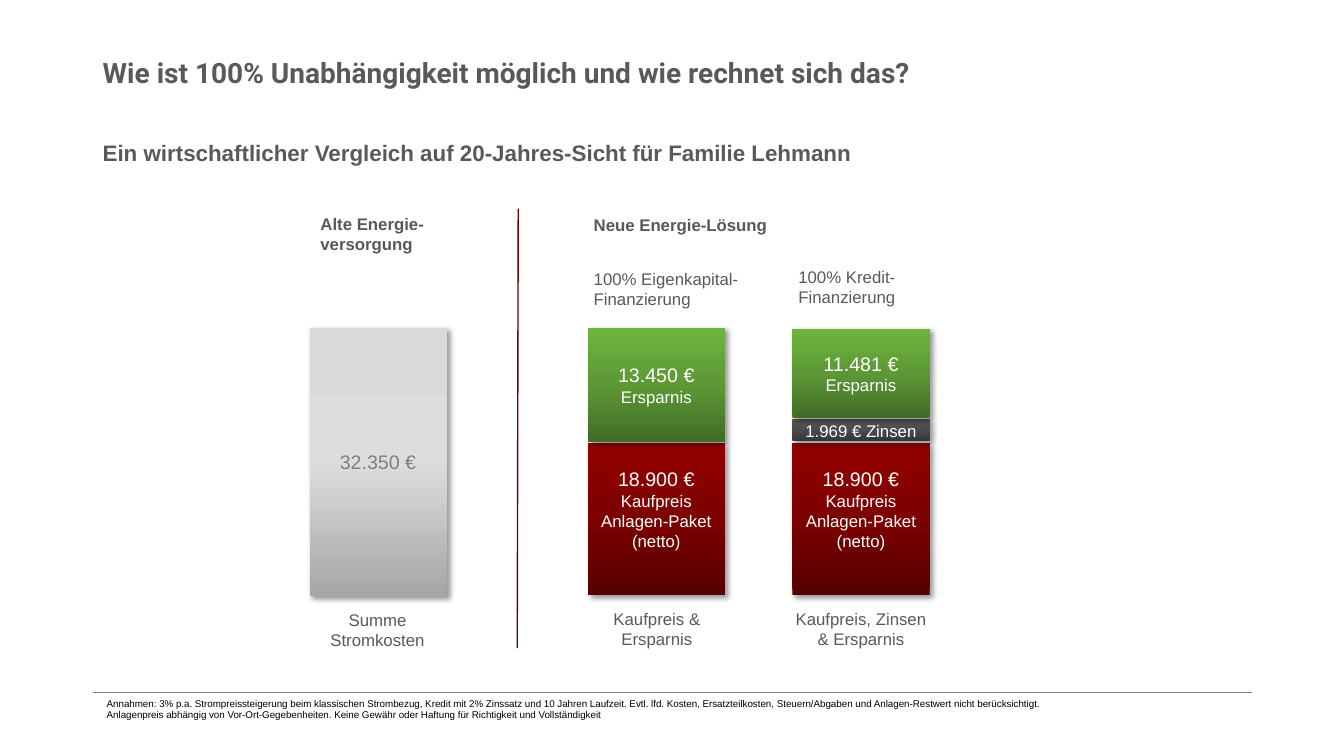
from lxml.etree import SubElement as Sub
from pptx import Presentation
from pptx.dml.color import RGBColor
from pptx.enum.shapes import MSO_CONNECTOR as Conn, MSO_SHAPE as Shape
from pptx.enum.text import MSO_ANCHOR as Anchor, MSO_AUTO_SIZE as Auto, PP_ALIGN as Align
from pptx.oxml.ns import qn
from pptx.util import Inches, Pt

GRAY, WHITE = "595959", "FFFFFF"
RED = ("570000", "7C0000", "930000")
GREEN = ("416B26", "5D9835", "6EB53F")
DARK = ("353535", "4B4B4B", "595959")
SILVER = ("A6A6A6", "DDDDDD", "D9D9D9")
OLD_X, CASH_X, LOAN_X = 3.07, 5.83, 7.86
BAR_W = 1.36


def rgb(code):
    return RGBColor.from_string(code)


def write(frame, lines, color, align, bold=False, face="Arial"):
    """Fill a text frame with one paragraph for each (text, size) pair."""
    for i, (text, size) in enumerate(lines):
        para = frame.add_paragraph() if i else frame.paragraphs[0]
        para.alignment = align
        run = para.add_run()
        run.text = text
        font = run.font
        font.name, font.size, font.bold = face, Pt(size), bold
        font.color.rgb = rgb(color)


def add_text(slide, box, lines, size=12, color=GRAY, align=Align.LEFT,
             wrap=True, **style):
    shape = slide.shapes.add_textbox(*map(Inches, box))
    frame = shape.text_frame
    frame.word_wrap = wrap
    frame.auto_size = Auto.SHAPE_TO_FIT_TEXT
    write(frame, [(line, size) for line in lines], color, align, **style)
    return frame


def add_line(slide, start, end, color, width):
    line = slide.shapes.add_connector(Conn.STRAIGHT, *map(Inches, start + end))
    line.line.color.rgb = rgb(color)
    line.line.width = Pt(width)
    Sub(line._element.spPr, qn("a:effectLst"))


def shade(shape, colors):
    """Blend three colours from bottom to top."""
    shape.fill.gradient()
    shape.fill.gradient_angle = 90
    stops = shape._element.spPr.find(".//" + qn("a:gsLst"))
    for stop in list(stops):
        stops.remove(stop)
    for pos, code in zip((0, 50000, 100000), colors):
        stop = Sub(stops, qn("a:gs"), pos=str(pos))
        Sub(stop, qn("a:srgbClr"), val=code)


def add_shadow(shape):
    shape.shadow.inherit = False
    effects = shape._element.spPr.find(qn("a:effectLst"))
    outer = Sub(effects, qn("a:outerShdw"), blurRad=str(Pt(4)), dist=str(Pt(3)),
                dir="2700000", algn="tl", rotWithShape="0")
    tint = Sub(outer, qn("a:srgbClr"), val="000000")
    Sub(tint, qn("a:alpha"), val="40000")


def add_bar(slide, left, top, height, colors, lines, color=WHITE, foot=0.05):
    """Draw one bar segment; foot is the free space below its text."""
    shape = slide.shapes.add_shape(
        Shape.RECTANGLE, *map(Inches, (left, top, BAR_W, height)))
    shade(shape, colors)
    shape.line.fill.background()
    add_shadow(shape)
    frame = shape.text_frame
    frame.word_wrap = True
    frame.vertical_anchor = Anchor.MIDDLE
    frame.margin_bottom = Inches(foot)
    write(frame, lines, color, Align.CENTER)


def add_bars(slide):
    price = [("18.900 €", 14), ("Kaufpreis Anlagen-Paket (netto)", 12)]
    for left in (CASH_X, LOAN_X):
        add_bar(slide, left, 4.4, 1.5, RED, price, foot=0.25)
    add_bar(slide, LOAN_X, 4.16, 0.22, DARK, [("1.969 € Zinsen", 12)])
    for left, top, height, sum_ in ((CASH_X, 3.25, 1.14, "13.450 €"),
                                    (LOAN_X, 3.26, 0.89, "11.481 €")):
        add_bar(slide, left, top, height, GREEN, [(sum_, 14), ("Ersparnis", 12)])
    add_bar(slide, OLD_X, 3.25, 2.66, SILVER, [("32.350 €", 14)], "808080")


def add_labels(slide):
    for box, text in (
        ((3.01, 6, 1.47, 0.5), "Summe Stromkosten"),
        ((5.77, 5.99, 1.49, 0.5), "Kaufpreis & Ersparnis"),
        ((7.77, 5.99, 1.54, 0.5), "Kaufpreis, Zinsen & Ersparnis"),
    ):
        add_text(slide, box, [text], align=Align.CENTER)
    add_text(slide, (3.08, 2.07, 1.46, 0.5), ["Alte Energie-versorgung"], bold=True)
    add_text(slide, (5.79, 2.08, 2.07, 0.3), ["Neue Energie-Lösung"], bold=True)
    for box, kind in (((5.79, 2.62, 1.64, 0.5), "100% Eigenkapital-"),
                      ((7.82, 2.6, 1.44, 0.5), "100% Kredit-")):
        add_text(slide, box, [kind, "Finanzierung"])


def main():
    deck = Presentation()
    deck.slide_width, deck.slide_height = Inches(13.33), Inches(7.5)
    slide = deck.slides.add_slide(deck.slide_layouts[6])

    title = add_text(
        slide, (0.92, 0.49, 8.79, 0.49),
        ["Wie ist 100% Unabhängigkeit möglich und wie rechnet sich das?"],
        size=20, bold=True, face="Roboto")
    title.auto_size = Auto.NONE
    title.vertical_anchor = Anchor.MIDDLE
    title.paragraphs[0].line_spacing = 0.9
    add_text(
        slide, (0.92, 1.33, 8.59, 0.37),
        ["Ein wirtschaftlicher Vergleich auf 20-Jahres-Sicht für Familie Lehmann"],
        size=16, bold=True)

    add_line(slide, (5.14, 2.07), (5.13, 6.43), "6A0000", 1)
    add_bars(slide)
    add_labels(slide)

    add_line(slide, (0.92, 6.87), (12.42, 6.87), "808080", 0.5)
    add_text(
        slide, (0.96, 6.87, 9.61, 0.34),
        ["Annahmen: 3% p.a. Strompreissteigerung beim klassischen Strombezug, "
         "Kredit mit 2% Zinssatz und 10 Jahren Laufzeit. Evtl. lfd. Kosten, "
         "Ersatzteilkosten, Steuern/Abgaben und Anlagen-Restwert nicht "
         "berücksichtigt.",
         "Anlagenpreis abhängig von Vor-Ort-Gegebenheiten. Keine Gewähr oder "
         "Haftung für Richtigkeit und Vollständigkeit"],
        size=7, color="000000", wrap=False)
    deck.save("out.pptx")


if __name__ == "__main__":
    main()
